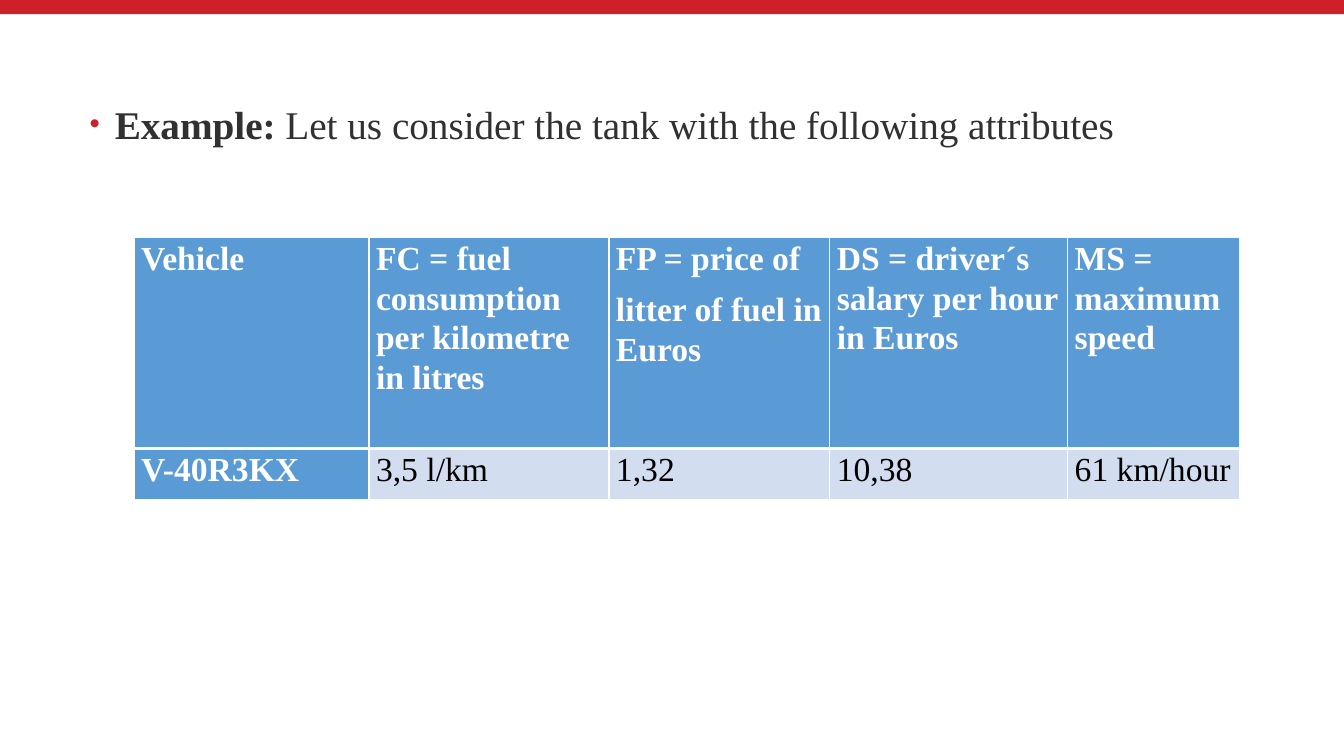
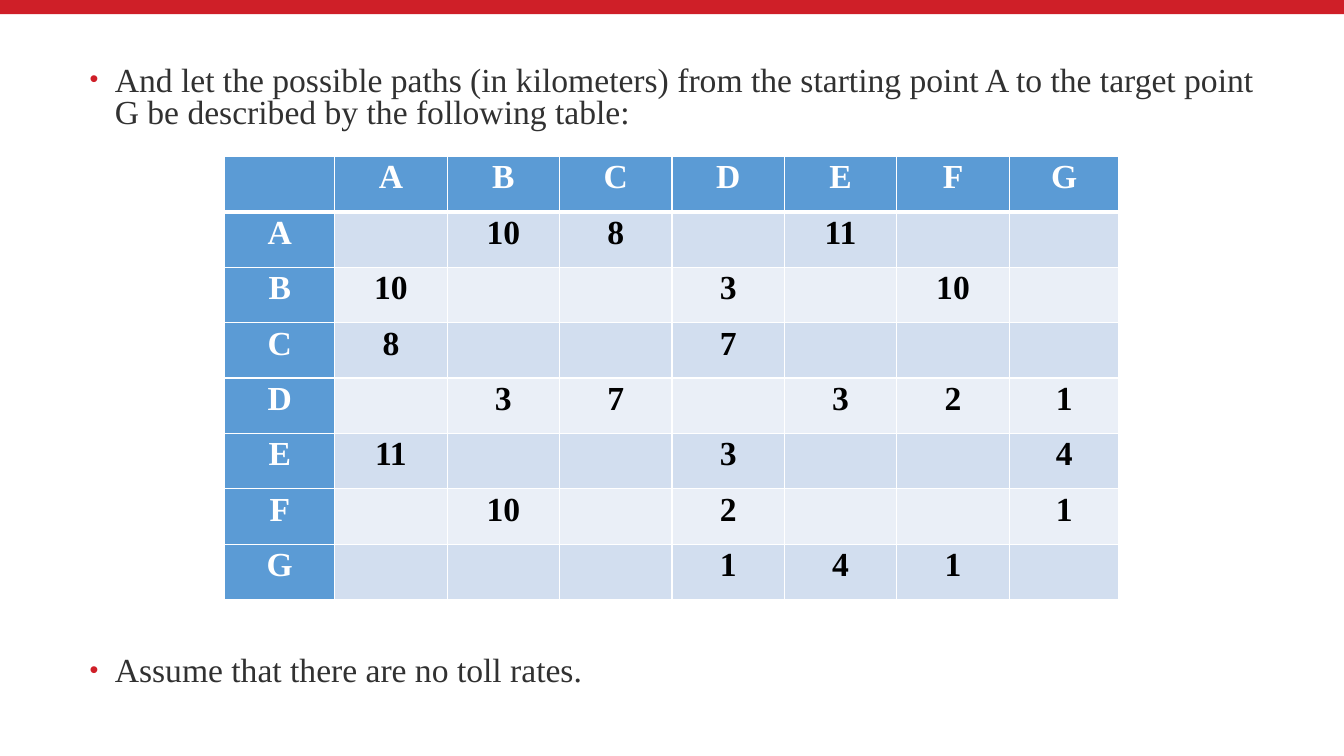
"""Build two slides that set out a vehicle routing example."""
from dataclasses import dataclass

from lxml import etree
from pptx import Presentation
from pptx import util as u
from pptx.dml.color import RGBColor
from pptx.enum import shapes, text
from pptx.oxml import ns


@dataclass(frozen=True)
class Theme:
    """Colours, font and type sizes of the deck."""
    red: str = "CF1F28"
    ink: str = "313131"
    blue: str = "5B9BD5"
    bands: tuple = ("D2DEEF", "EAEFF7")
    white: str = "FFFFFF"
    black: str = "000000"
    font: str = "Times New Roman"
    lead: int = 28
    body: int = 24


T = Theme()
WIDTH, HEIGHT = 13.33, 7.5
VEHICLE = [
    ["Vehicle", "FC = fuel consumption per kilometre in litres",
     "FP = price of\nlitter of fuel in Euros",
     "DS = driver´s salary per hour in Euros", "MS = maximum speed"],
    ["V-40R3KX", "3,5 l/km", "1,32", "10,38", "61 km/hour"],
]
POINTS = "ABCDEFG"
PATHS = {"AB": 10, "AC": 8, "AE": 11, "BD": 3, "BF": 10, "CD": 7,
         "DE": 3, "DF": 2, "DG": 1, "EG": 4, "FG": 1}


def put(obj, **values):
    """Set several attributes of one object."""
    for name, value in values.items():
        setattr(obj, name, value)


def sub(parent, tag, **attrs):
    """Append a drawing element to a parent."""
    return etree.SubElement(parent, ns.qn(tag), attrs)


def paint(fill, color):
    """Make a fill solid in one colour."""
    fill.solid()
    fill.fore_color.rgb = RGBColor.from_string(color)


def add_run(p, content, size, color, bold=False):
    """Add one formatted run to a paragraph."""
    r = p.add_run()
    r.text = content
    put(r.font, name=T.font, size=u.Pt(size), bold=bold)
    r.font.color.rgb = RGBColor.from_string(color)


def new_slide(prs):
    """Add a blank slide with the red band on top."""
    s = prs.slides.add_slide(prs.slide_layouts[6])
    paint(s.background.fill, T.white)
    sp = s.shapes.add_shape(shapes.MSO_SHAPE.RECTANGLE, 0, 0,
                            u.Inches(WIDTH), u.Inches(0.14))
    sp.shadow.inherit = False
    paint(sp.fill, T.red)
    sp.line.fill.background()
    return s


def add_bullet(s, box, runs, size, spacing=1.0):
    """Place one bulleted paragraph made of (text, bold) runs."""
    tf = s.shapes.add_textbox(*map(u.Inches, box)).text_frame
    put(tf, word_wrap=True, margin_top=u.Inches(0.09))
    p = tf.paragraphs[0]
    pPr = p._p.get_or_add_pPr()
    put(p, line_spacing=spacing)
    indent = u.Inches(0.25)
    pPr.set("marL", str(indent))
    pPr.set("indent", str(-indent))
    sub(sub(pPr, "a:buClr"), "a:srgbClr", val=T.red)
    sub(pPr, "a:buSzPct", val="75000")
    sub(pPr, "a:buFont", typeface="Arial")
    sub(pPr, "a:buChar", char="•")
    for content, bold in runs:
        add_run(p, content, size, T.ink, bold)


def add_borders(cell, row):
    """Draw white cell borders, with a thick rule under the header."""
    tcPr = cell._tc.get_or_add_tcPr()
    thick = {0: "B", 1: "T"}.get(row)
    for side in "LRTB":
        width = u.Pt(3 if side == thick else 1)
        ln = sub(tcPr, f"a:ln{side}", w=str(width))
        sub(sub(ln, "a:solidFill"), "a:srgbClr", val=T.white)


def add_grid(s, left, top, widths, heights, rows, align, bold):
    """Place a banded table with a header row and a header column."""
    box = (left, top, sum(widths), sum(heights))
    table = s.shapes.add_table(len(rows), len(widths),
                               *map(u.Inches, box)).table
    put(table, first_row=False, horz_banding=False)
    for column, width in zip(table.columns, widths):
        column.width = u.Inches(width)
    for i, (row, height) in enumerate(zip(rows, heights)):
        table.rows[i].height = u.Inches(height)
        for j, content in enumerate(row):
            head = i == 0 or j == 0
            cell = table.cell(i, j)
            put(cell, margin_left=u.Inches(0.07), margin_top=0,
                margin_right=u.Inches(0.07), margin_bottom=0)
            add_borders(cell, i)
            paint(cell.fill, T.blue if head else T.bands[(i - 1) % 2])
            tf = cell.text_frame
            for k, line in enumerate(content.split("\n") if content else []):
                p = tf.add_paragraph() if k else tf.paragraphs[0]
                put(p, alignment=align, line_spacing=1.07,
                    space_after=u.Pt(8))
                add_run(p, line, T.body, T.white if head else T.black,
                        head or bold)


def path_rows():
    """Lay out the path lengths as a symmetric matrix."""
    def length(a, b):
        """Return the path length between two points as text."""
        return str(PATHS.get("".join(sorted(a + b)), ""))
    return [["", *POINTS]] + [[a, *(length(a, b) for b in POINTS)]
                              for a in POINTS]


def vehicle_slide(prs):
    """Show the attributes of the vehicle."""
    s = new_slide(prs)
    add_bullet(s, (0.79, 0.9, 11.76, 0.65),
               [("Example: ", True),
                ("Let us consider the tank with the following attributes",
                 False)], T.lead)
    add_grid(s, 1.33, 2.36, [2.33, 2.38, 2.19, 2.36, 1.71], [2.09, 0.51],
             VEHICLE, text.PP_ALIGN.LEFT, False)


def paths_slide(prs):
    """Show the path lengths between the points."""
    s = new_slide(prs)
    add_bullet(s, (0.79, 0.57, 11.76, 0.8),
               [("And let the possible paths (in kilometers) from the "
                 "starting point A to the target point G be described by "
                 "the following table:", False)], T.body, 0.8)
    add_grid(s, 2.23, 1.55, [1.09] + [1.115] * 6 + [1.09], [0.55] * 8,
             path_rows(), text.PP_ALIGN.CENTER, True)
    add_bullet(s, (0.79, 6.43, 11.76, 0.5),
               [("Assume that there are no toll rates.", False)],
               T.body, 0.8)


def main():
    """Build and save the deck."""
    prs = Presentation()
    put(prs, slide_width=u.Inches(WIDTH), slide_height=u.Inches(HEIGHT))
    vehicle_slide(prs)
    paths_slide(prs)
    prs.save("out.pptx")


if __name__ == "__main__":
    main()
